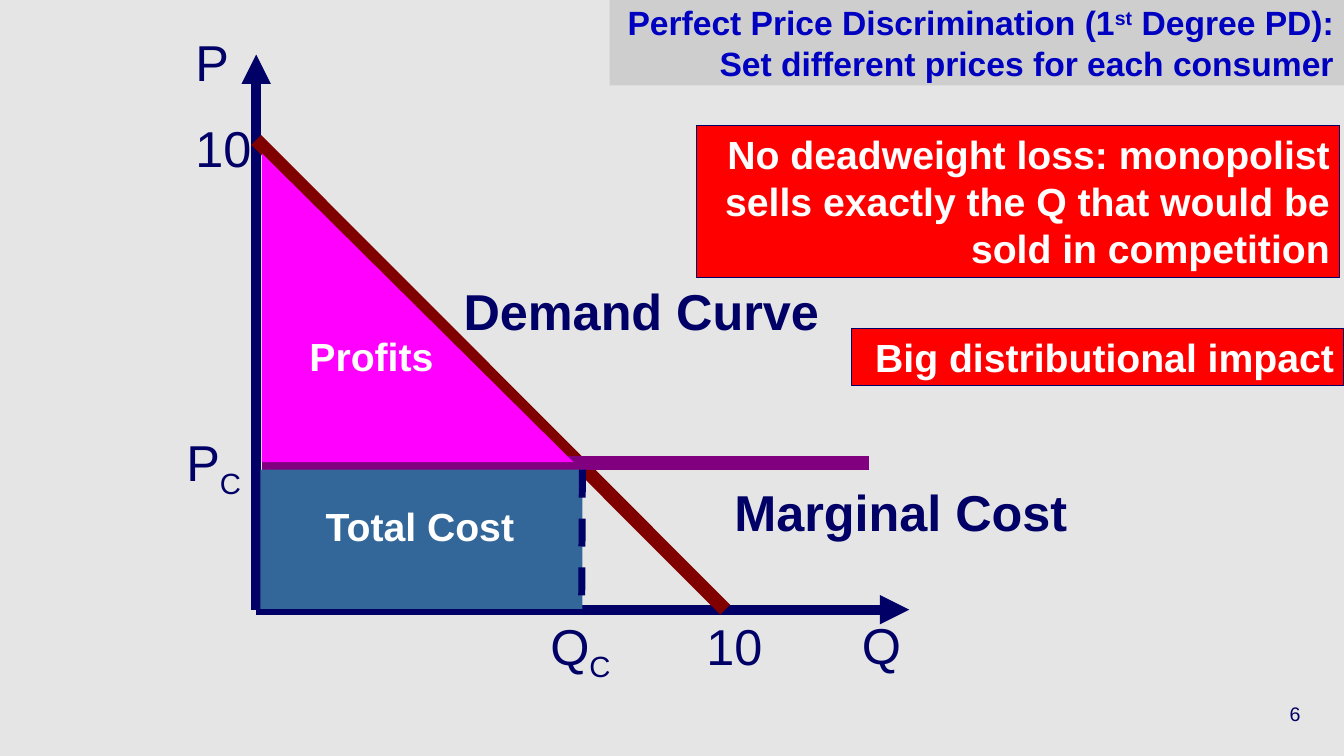
"""Build a slide on perfect price discrimination with a demand and cost diagram."""
from lxml.etree import SubElement
from pptx import Presentation
from pptx.dml.color import RGBColor
from pptx.enum.dml import MSO_LINE
from pptx.enum.shapes import MSO_CONNECTOR, MSO_SHAPE
from pptx.enum.text import MSO_ANCHOR, MSO_AUTO_SIZE, PP_ALIGN
from pptx.oxml.ns import qn
from pptx.util import Pt

COLORS = {
    "background": "E5E5E5", "title_fill": "CECECE", "title": "0000C0",
    "navy": "000066", "demand": "800000", "marginal_cost": "800080",
    "profits": "FF00FF", "total_cost": "336699", "callout": "FF0000",
    "white": "FFFFFF",
}
ORIGIN_X, ORIGIN_Y = 183, 435.5
COST_Y = 330.5


def color(name):
    return RGBColor.from_string(COLORS[name])


def write(frame, runs, size, ink, bold=False, align=PP_ALIGN.LEFT, wrap=True):
    """Fill a text frame with (text, baseline) runs in one style."""
    frame.word_wrap = wrap
    frame.auto_size = MSO_AUTO_SIZE.NONE
    paragraph = frame.paragraphs[0]
    paragraph.alignment = align
    font = paragraph.font
    font.name, font.size, font.bold = "Arial", Pt(size), bold
    font.color.rgb = color(ink)
    for text, baseline in runs:
        run = paragraph.add_run()
        run.text = text
        if baseline:
            run._r.get_or_add_rPr().set("baseline", str(baseline * 1000))


prs = Presentation()
prs.slide_width, prs.slide_height = Pt(960), Pt(540)
slide = prs.slides.add_slide(prs.slide_layouts[5])
slide.background.fill.solid()
slide.background.fill.fore_color.rgb = color("background")
shapes = slide.shapes

title = shapes.title
title.left, title.top, title.width, title.height = Pt(435.5), Pt(0), Pt(524.5), Pt(61)
title.fill.solid()
title.fill.fore_color.rgb = color("title_fill")
title.text_frame.vertical_anchor = MSO_ANCHOR.MIDDLE
title_runs = [
    ("Perfect Price Discrimination (1", 0),
    ("st", 30),
    (" Degree PD): Set different prices for each consumer", 0),
]
write(title.text_frame, title_runs, 24, "title", True, PP_ALIGN.RIGHT)

curves = [
    (ORIGIN_X, ORIGIN_Y, 649.5, ORIGIN_Y, "navy", 7, "arrow"),
    (ORIGIN_X, ORIGIN_Y, ORIGIN_X, 39, "navy", 7, "arrow"),
    (ORIGIN_X, 100, 518, ORIGIN_Y, "demand", 10, None),
    (187, COST_Y, 620.5, COST_Y, "marginal_cost", 10, None),
    (416, 335.5, 415.5, ORIGIN_Y, "navy", 5, "dash"),
]
areas = [
    (MSO_SHAPE.RIGHT_TRIANGLE, 187, 109.5, 222.5, 220.5, "profits"),
    (MSO_SHAPE.RECTANGLE, 186, 335.5, 230, 99.5, "total_cost"),
]


for kind, left, top, width, height, fill in areas:
    if kind == MSO_SHAPE.RIGHT_TRIANGLE:
        drawn_curves = curves[:4]
    else:
        drawn_curves = curves[4:]
    if kind == MSO_SHAPE.RIGHT_TRIANGLE:
        pending = [("curve", c) for c in drawn_curves] + [("area", None)]
    else:
        pending = [("area", None)] + [("curve", c) for c in drawn_curves]
    for part, curve in pending:
        if part == "area":
            area = shapes.add_shape(kind, Pt(left), Pt(top), Pt(width), Pt(height))
            area.shadow.inherit = False
            area.fill.solid()
            area.fill.fore_color.rgb = color(fill)
            area.line.fill.background()
            continue
        x1, y1, x2, y2, ink, weight, style = curve
        line = shapes.add_connector(MSO_CONNECTOR.STRAIGHT, Pt(x1), Pt(y1), Pt(x2), Pt(y2))
        line.line.color.rgb = color(ink)
        line.line.width = Pt(weight)
        if style == "dash":
            line.line.dash_style = MSO_LINE.DASH
        if style == "arrow":
            SubElement(line.line._get_or_add_ln(), qn("a:tailEnd"), type="triangle")
        SubElement(line._element.spPr, qn("a:effectLst"))

labels = [
    ([("P", 0)], 132.5, 18.5, 60.5, 36, "navy", False),
    ([("Q", 0)], 608.5, 435, 43, 36, "navy", False),
    ([("Demand Curve", 0)], 324, 196.5, 286, 36, "navy", True),
    ([("10", 0)], 132.5, 80, 54.5, 36, "navy", False),
    ([("10", 0)], 497.5, 435.5, 55.5, 36, "navy", False),
    ([("Marginal Cost", 0)], 517.5, 340, 255, 36, "navy", True),
    ([("Profits", 0)], 214, 234, 103, 28, "white", True),
    ([("Total Cost", 0)], 225.5, 355, 151, 28, "white", True),
    ([("Q", 0), ("C", -25)], 386, 435.5, 60.5, 36, "navy", False),
    ([("P", 0), ("C", -25)], 126, 304.5, 56, 36, "navy", False),
]
for runs, left, top, width, size, ink, bold in labels:
    label = shapes.add_textbox(Pt(left), Pt(top), Pt(width), Pt(size * 1.2 + 7.5))
    write(label.text_frame, runs, size, ink, bold, wrap=False)

callouts = [
    ("No deadweight loss: monopolist sells exactly the Q that would be sold in competition",
     497.5, 89.5, 459.5, 108.5),
    ("Big distributional impact", 608.5, 234.5, 351.5, 41),
]
for text, left, top, width, height in callouts:
    callout = shapes.add_shape(MSO_SHAPE.RECTANGLE, Pt(left), Pt(top), Pt(width), Pt(height))
    callout.shadow.inherit = False
    callout.fill.solid()
    callout.fill.fore_color.rgb = color("callout")
    callout.line.color.rgb = color("navy")
    callout.line.width = Pt(0.75)
    callout.text_frame.vertical_anchor = MSO_ANCHOR.TOP
    write(callout.text_frame, [(text, 0)], 28, "white", True, PP_ALIGN.RIGHT)

page_number = shapes.add_textbox(Pt(736), Pt(492), Pt(200), Pt(36))
page_number.text_frame.vertical_anchor = MSO_ANCHOR.MIDDLE
write(page_number.text_frame, [("6", 0)], 14, "navy", align=PP_ALIGN.RIGHT, wrap=False)

prs.save("out.pptx")
